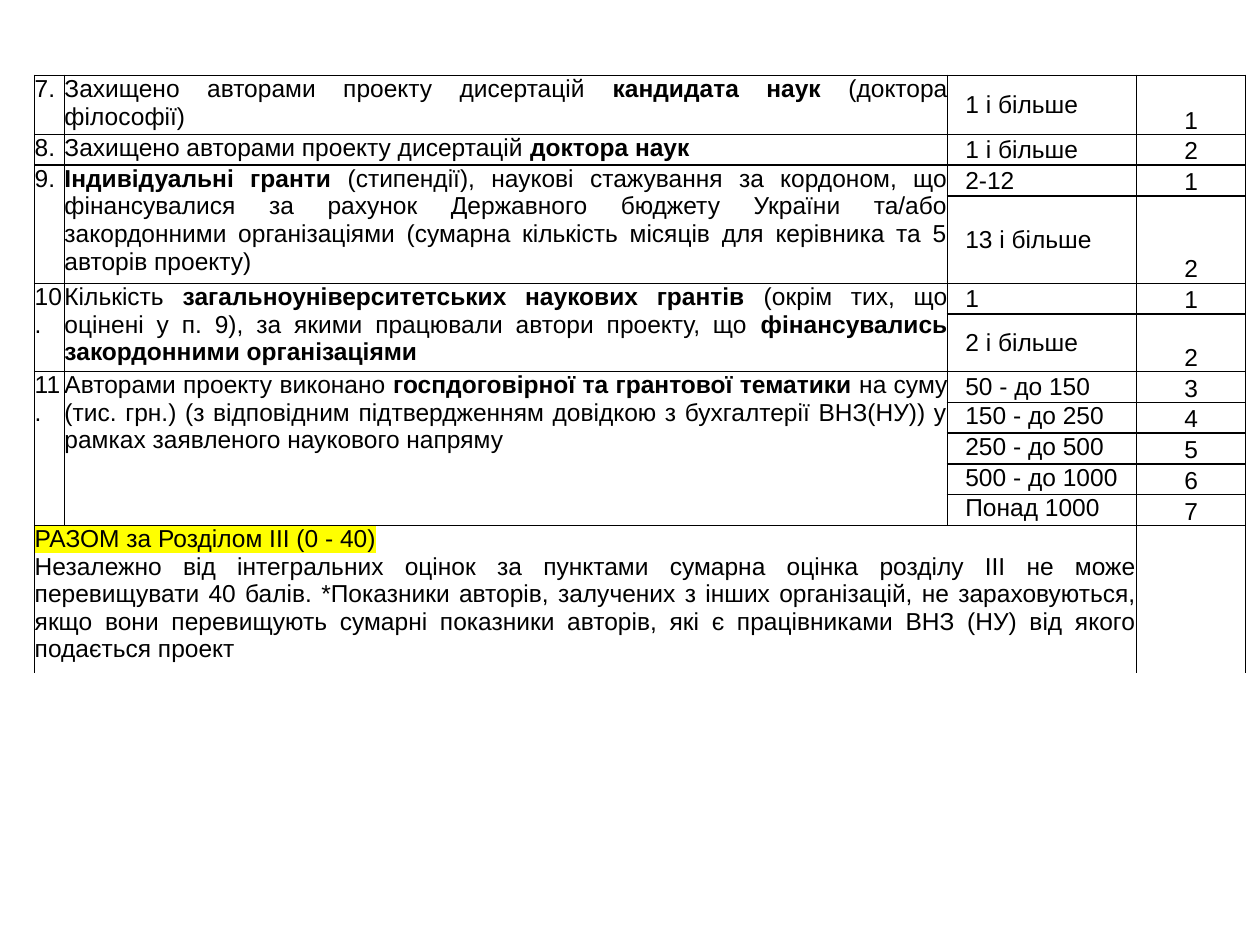
"""Build the slide with the scoring table for project authors, items 7 to 11."""
from dataclasses import dataclass

from lxml import etree
from pptx import Presentation
from pptx.dml.color import RGBColor
from pptx.enum.text import MSO_ANCHOR, PP_ALIGN
from pptx.oxml.ns import qn
from pptx.table import Table, _Cell
from pptx.util import Cm, Inches, Pt

TOP, MIDDLE, BOTTOM = MSO_ANCHOR.TOP, MSO_ANCHOR.MIDDLE, MSO_ANCHOR.BOTTOM
JUSTIFY, CENTER = PP_ALIGN.JUSTIFY, PP_ALIGN.CENTER
COLORS = {"text": "000000", "border": "000000", "cell": "FFFFFF", "highlight": "FFFF00"}
FONT = "Arial"
BLANK_LAYOUT = 6
COLUMN_WIDTHS = (0.6, 17.8, 3.81, 2.2)
LINE_HEIGHT = 0.62
TOTAL_HEIGHT = 2.97


@dataclass(frozen=True)
class Grade:
    """One range of values with the points it earns."""
    label: str
    points: str
    height: float = LINE_HEIGHT
    anchor: MSO_ANCHOR = MIDDLE


@dataclass(frozen=True)
class Criterion:
    """One numbered item; the odd parts of its wording are bold."""
    number: str
    wording: tuple[str, ...]
    grades: tuple[Grade, ...]


CRITERIA = (
    Criterion("7.", ("Захищено авторами проекту дисертацій ", "кандидата наук",
                     " (доктора філософії)"),
              (Grade("1 і більше", "1", 1.19),)),
    Criterion("8.", ("Захищено авторами проекту дисертацій ", "доктора наук"),
              (Grade("1 і більше", "2"),)),
    Criterion("9.", ("", "Індивідуальні гранти",
                     " (стипендії), наукові стажування за кордоном, що фінансувалися за рахунок "
                     "Державного бюджету України та/або закордонними організаціями (сумарна "
                     "кількість місяців для керівника та 5 авторів проекту)"),
              (Grade("2-12", "1"), Grade("13 і більше", "2", 1.76))),
    Criterion("10.", ("Кількість ", "загальноуніверситетських наукових грантів",
                      " (окрім тих, що оцінені у п. 9), за якими працювали автори проекту, що ",
                      "фінансувались закордонними організаціями"),
              (Grade("1", "1"), Grade("2 і більше", "2", 1.16))),
    Criterion("11.", ("Авторами проекту виконано ", "госпдоговірної та грантової тематики",
                      " на суму (тис. грн.) (з відповідним підтвердженням довідкою з бухгалтерії "
                      "ВНЗ(НУ)) у рамках заявленого наукового напряму"),
              (Grade("50 - до 150", "3"),
               Grade("150 - до 250", "4", anchor=TOP),
               Grade("250 - до 500", "5", anchor=TOP),
               Grade("500 - до 1000", "6", anchor=TOP),
               Grade("Понад 1000", "7", anchor=TOP))),
)
TOTAL_TITLE = "РАЗОМ за Розділом ІІІ (0 - 40)"
TOTAL_NOTE = (
    "Незалежно від інтегральних оцінок за пунктами сумарна оцінка розділу ІІІ не може "
    "перевищувати 40 балів. *Показники авторів, залучених з інших організацій, не "
    "зараховуються, якщо вони перевищують сумарні показники авторів, які є працівниками "
    "ВНЗ (НУ) від якого подається проект"
)


def write(cell: _Cell, *parts: str, align: PP_ALIGN = JUSTIFY, anchor: MSO_ANCHOR = TOP,
          indent: float = 0, highlight: bool = False, append: bool = False) -> None:
    """Write one paragraph whose odd parts are bold."""
    cell.vertical_anchor = anchor
    frame = cell.text_frame
    paragraph = frame.add_paragraph() if append else frame.paragraphs[0]
    paragraph.alignment = align
    if indent:
        properties = paragraph._p.get_or_add_pPr()
        properties.set("marL", str(Cm(indent)))
        properties.set("indent", "0")
    for index, part in enumerate(parts):
        if not part:
            continue
        run = paragraph.add_run()
        run.text = part
        run.font.size = Pt(14)
        run.font.bold = index % 2 == 1
        run.font.color.rgb = RGBColor.from_string(COLORS["text"])
        if highlight:
            marker = etree.SubElement(run.font._element, qn("a:highlight"))
            etree.SubElement(marker, qn("a:srgbClr"), val=COLORS["highlight"])
        run.font.name = FONT


def style_cell(cell: _Cell, sides: str) -> None:
    """Give a cell its fill, zero margins and borders on the given sides."""
    cell.fill.solid()
    cell.fill.fore_color.rgb = RGBColor.from_string(COLORS["cell"])
    cell.margin_left = cell.margin_right = cell.margin_top = cell.margin_bottom = 0
    properties = cell._tc.get_or_add_tcPr()
    for position, side in enumerate("LRTB"):
        border = etree.Element(qn(f"a:ln{side}"), w=str(Pt(1)))
        if side in sides:
            fill = etree.SubElement(border, qn("a:solidFill"))
            etree.SubElement(fill, qn("a:srgbClr"), val=COLORS["border"])
        else:
            etree.SubElement(border, qn("a:noFill"))
        properties.insert(position, border)


def fill_criterion(table: Table, first: int, criterion: Criterion) -> None:
    """Fill the rows of one criterion, starting at the given row."""
    last = first + len(criterion.grades) - 1
    for column, parts in enumerate(((criterion.number,), criterion.wording)):
        cell = table.cell(first, column)
        if last > first:
            cell.merge(table.cell(last, column))
        write(cell, *parts)
    for row, grade in enumerate(criterion.grades, first):
        write(table.cell(row, 2), grade.label, anchor=grade.anchor, indent=0.36)
        write(table.cell(row, 3), grade.points, align=CENTER, anchor=BOTTOM)


def fill_total(table: Table, row: int) -> None:
    """Fill the closing row with the section total."""
    total = table.cell(row, 0)
    total.merge(table.cell(row, 2))
    write(total, TOTAL_TITLE, highlight=True)
    write(total, TOTAL_NOTE, append=True)


def main() -> None:
    """Build and save the presentation."""
    presentation = Presentation()
    presentation.slide_width, presentation.slide_height = Inches(10), Inches(7.5)
    slide = presentation.slides.add_slide(presentation.slide_layouts[BLANK_LAYOUT])
    heights = [grade.height for item in CRITERIA for grade in item.grades] + [TOTAL_HEIGHT]
    table = slide.shapes.add_table(
        len(heights), len(COLUMN_WIDTHS), Cm(0.7), Cm(1.52),
        Cm(sum(COLUMN_WIDTHS)), Cm(sum(heights))).table
    table.first_row = table.horz_banding = False
    for column, width in zip(table.columns, COLUMN_WIDTHS):
        column.width = Cm(width)
    total_row = len(heights) - 1
    for index, (row, height) in enumerate(zip(table.rows, heights)):
        row.height = Cm(height)
        for cell in row.cells:
            style_cell(cell, "LRT" if index == total_row else "LRTB")
    first = 0
    for criterion in CRITERIA:
        fill_criterion(table, first, criterion)
        first += len(criterion.grades)
    fill_total(table, total_row)
    presentation.save("out.pptx")


if __name__ == "__main__":
    main()
